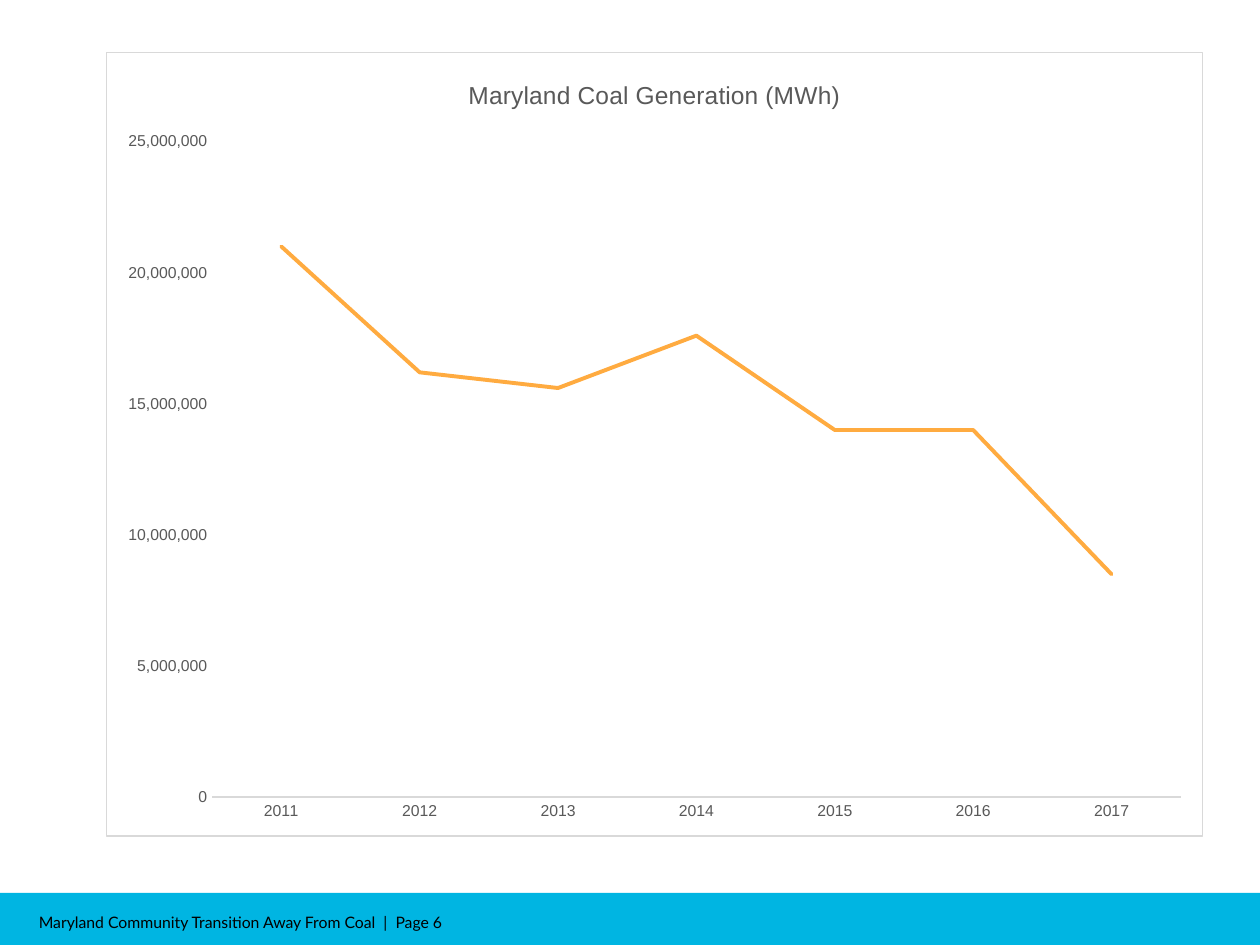
from lxml import etree
from pptx import Presentation
from pptx import util as u
from pptx.chart.data import CategoryChartData
from pptx.dml.color import RGBColor
from pptx.enum import chart as ch, shapes, text

BLUE = RGBColor(0x00, 0xB5, 0xE2)
BLACK = RGBColor(0x00, 0x00, 0x00)
GREY = RGBColor(0x59, 0x59, 0x59)
PALE = RGBColor(0xD9, 0xD9, 0xD9)
GOLD = RGBColor(0xFF, 0xAB, 0x40)
TITLE = "Maryland Coal Generation (MWh)"
MWH = [21000000, 16200000, 15600000, 17600000, 14000000, 14000000, 8500000]


def style(font, size, color, name="Arial"):
    font.size, font.name, font.bold = u.Pt(size), name, False
    font.color.rgb = color


prs = Presentation()
prs.slide_width, prs.slide_height = u.Inches(10), u.Inches(7.5)
wide, high = prs.slide_width, prs.slide_height
slide = prs.slides.add_slide(prs.slide_layouts[6])

# Footer band
top = int(high * 0.945)
band = slide.shapes.add_shape(shapes.MSO_SHAPE.RECTANGLE, 0, top, wide, high - top)
band.shadow.inherit = False
band.fill.solid()
band.fill.fore_color.rgb = BLUE
band.line.fill.background()

foot = slide.shapes.add_textbox(u.Inches(0.21), u.Inches(7.14), u.Inches(8.18), u.Inches(0.35))
frame = foot.text_frame
frame.word_wrap = True
frame.vertical_anchor = text.MSO_ANCHOR.MIDDLE
frame.margin_left = frame.margin_right = u.Inches(0.1)
frame.margin_top = frame.margin_bottom = u.Inches(0.1)
frame.text = "Maryland Community Transition Away From Coal  |  Page 6"
style(frame.paragraphs[0].runs[0].font, 9, BLACK, "Lato")

# Line chart
data = CategoryChartData(number_format="#,##0")
data.categories = [str(year) for year in range(2011, 2018)]
data.add_series(TITLE, MWH)
chart = slide.shapes.add_chart(
    ch.XL_CHART_TYPE.LINE, u.Inches(0.84), u.Inches(0.41),
    u.Inches(8.71), u.Inches(6.23), data).chart
style(chart.font, 10, BLACK)
chart.has_legend = False
chart.has_title = True
chart.chart_title.include_in_layout = False
head = chart.chart_title.text_frame
head.text = TITLE
style(head.paragraphs[0].runs[0].font, 14, GREY)

for axis in (chart.category_axis, chart.value_axis):
    axis.has_major_gridlines = False
    axis.major_tick_mark = axis.minor_tick_mark = ch.XL_TICK_MARK.NONE
    style(axis.tick_labels.font, 9, GREY)
base = chart.category_axis.format.line
base.color.rgb = PALE
base.width = u.Pt(0.75)
scale = chart.value_axis
scale.format.line.fill.background()
scale.minimum_scale, scale.maximum_scale, scale.major_unit = 0, 25000000, 5000000
scale.tick_labels.number_format = "#,##0"
scale.tick_labels.number_format_is_linked = False

chart.plots[0].vary_by_categories = False
line = chart.plots[0].series[0]
line.smooth = False
line.marker.style = ch.XL_MARKER_STYLE.NONE
line.format.line.color.rgb = GOLD
line.format.line.width = u.Pt(2.25)
line.format.line._ln.set("cap", "rnd")

# White chart area with a thin border
area = etree.fromstring(
    '<c:spPr xmlns:c="http://schemas.openxmlformats.org/drawingml/2006/chart"'
    ' xmlns:a="http://schemas.openxmlformats.org/drawingml/2006/main">'
    '<a:solidFill><a:srgbClr val="FFFFFF"/></a:solidFill>'
    f'<a:ln w="{u.Pt(0.75)}"><a:solidFill><a:srgbClr val="{PALE}"/></a:solidFill></a:ln>'
    '</c:spPr>')
chart._chartSpace.chart.addnext(area)

prs.save("out.pptx")
